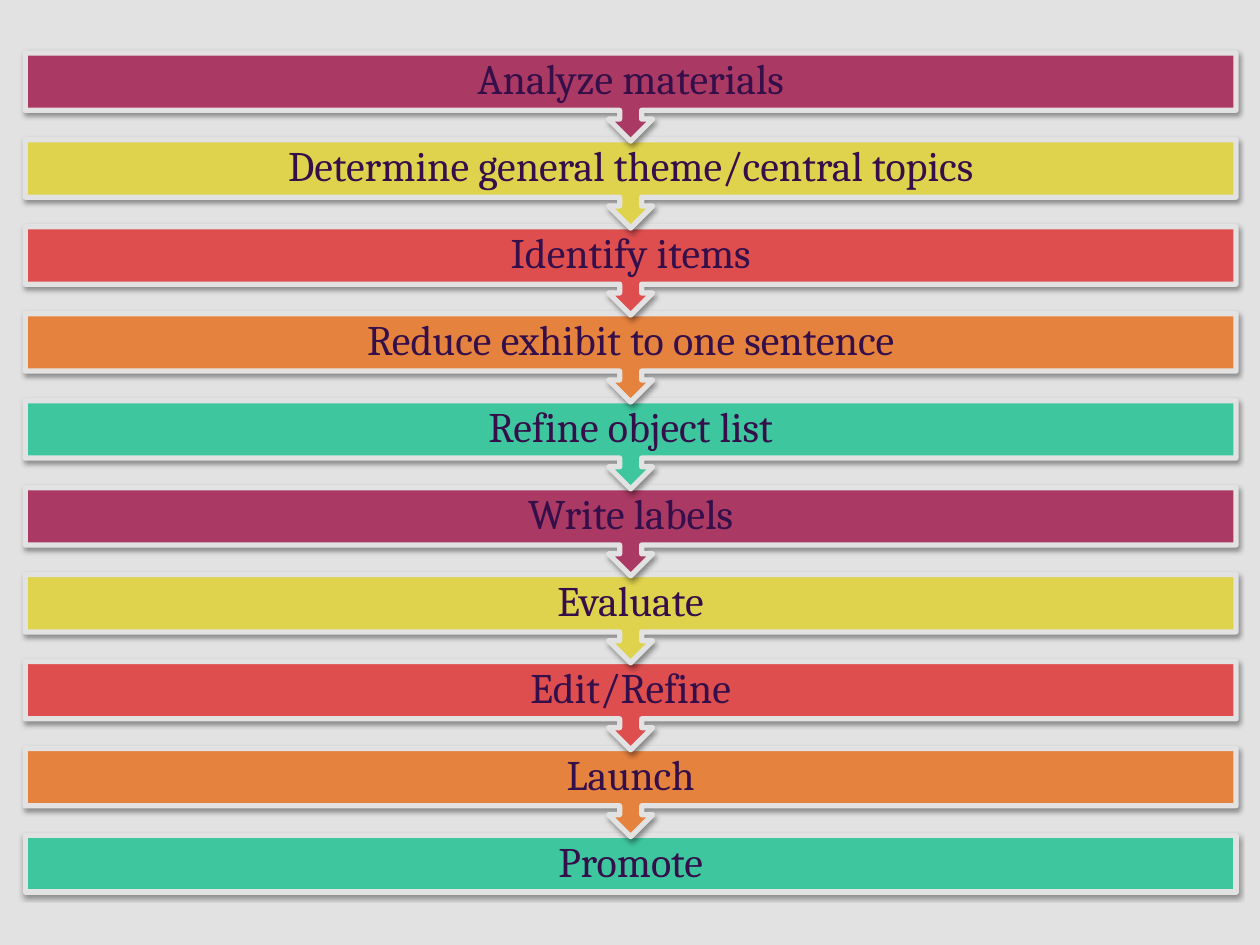
from lxml import etree
from pptx import Presentation
from pptx.dml.color import RGBColor
from pptx.enum.shapes import MSO_SHAPE
from pptx.enum.text import MSO_ANCHOR, PP_ALIGN
from pptx.oxml import parse_xml
from pptx.util import Inches, Pt

RECTANGLE = MSO_SHAPE.RECTANGLE
CALLOUT = MSO_SHAPE.UP_ARROW_CALLOUT
MIDDLE = MSO_ANCHOR.MIDDLE
CENTER = PP_ALIGN.CENTER

COLORS = {
    "background": "E2E2E2",
    "text": "340F4A",
    "plum": "AA3963",
    "yellow": "DFD24D",
    "red": "DE4E4F",
    "orange": "E5823E",
    "green": "3EC79F",
}
STEP_COLORS = ["plum", "yellow", "red", "orange", "green"]
STEPS = [
    "Analyze materials",
    "Determine general theme/central topics",
    "Identify items",
    "Reduce exhibit to one sentence",
    "Refine object list",
    "Write labels",
    "Evaluate",
    "Edit/Refine",
    "Launch",
    "Promote",
]
LEFT, TOP, WIDTH = 0.2, 0.42, 9.61
BAR_HEIGHT, CALLOUT_HEIGHT, PITCH = 0.45, 0.7, 0.69
SHADOW = (
    '<a:effectLst xmlns:a="http://schemas.openxmlformats.org/drawingml/2006/main">'
    '<a:outerShdw blurRad="39370" dist="20320" dir="5400000" rotWithShape="0">'
    '<a:srgbClr val="000000"><a:alpha val="38000"/></a:srgbClr>'
    "</a:outerShdw></a:effectLst>"
)


def add_label(page, text, *, top, size=24, font="Cambria", color="text"):
    box = page.shapes.add_textbox(Inches(LEFT), Inches(top), Inches(WIDTH), Inches(BAR_HEIGHT))
    frame = box.text_frame
    frame.word_wrap = True
    frame.vertical_anchor = MIDDLE
    frame.margin_left = frame.margin_right = Inches(0.19)
    frame.margin_top = frame.margin_bottom = Inches(0.19)
    para = frame.paragraphs[0]
    para.alignment = CENTER
    para.line_spacing = 0.9
    span = para.add_run()
    span.text = text
    span.font.size = Pt(size)
    span.font.name = font
    span.font.color.rgb = RGBColor.from_string(COLORS[color])


deck = Presentation()
deck.slide_width = Inches(10)
deck.slide_height = Inches(7.5)
page = deck.slides.add_slide(deck.slide_layouts[6])
page.background.fill.solid()
page.background.fill.fore_color.rgb = RGBColor.from_string(COLORS["background"])

last = len(STEPS) - 1
for index in range(last, -1, -1):
    top = TOP + index * PITCH
    kind, height = (RECTANGLE, BAR_HEIGHT) if index == last else (CALLOUT, CALLOUT_HEIGHT)
    bar = page.shapes.add_shape(kind, Inches(LEFT), Inches(top), Inches(WIDTH), Inches(height))
    if kind == CALLOUT:
        bar.rotation = 180
    bar.fill.solid()
    color = STEP_COLORS[index % len(STEP_COLORS)]
    bar.fill.fore_color.rgb = RGBColor.from_string(COLORS[color])
    bar.line.color.rgb = RGBColor.from_string(COLORS["background"])
    bar.line.width = Pt(3)
    bar.shadow.inherit = False
    effects = bar._element.spPr.find("{*}effectLst")
    effects.getparent().replace(effects, parse_xml(SHADOW))
    add_label(page, STEPS[index], top=top)

deck.save("out.pptx")
